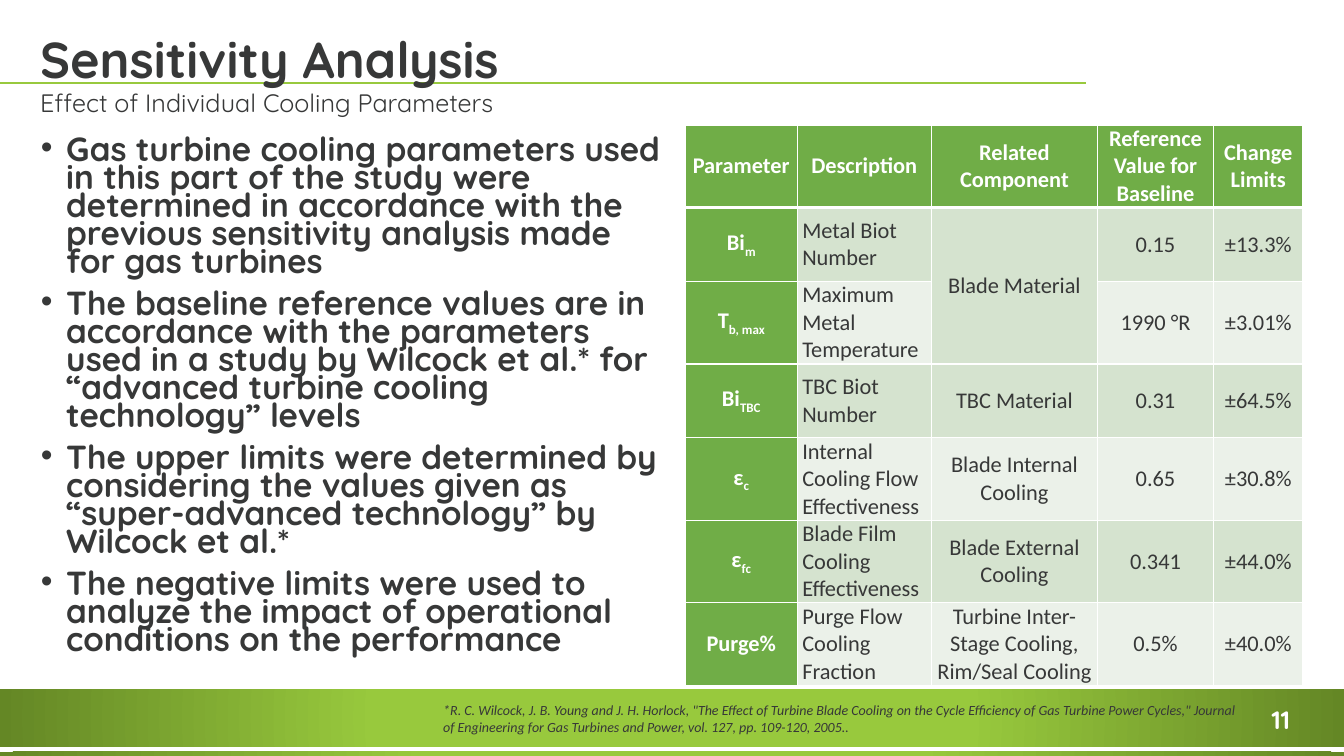
from dataclasses import dataclass
from typing import NamedTuple

from lxml import etree
from pptx import Presentation
from pptx.dml.color import RGBColor
from pptx.enum.shapes import MSO_CONNECTOR, MSO_SHAPE
from pptx.enum.text import MSO_ANCHOR, PP_ALIGN
from pptx.oxml.ns import qn
from pptx.util import Cm, Pt

STRAIGHT = MSO_CONNECTOR.STRAIGHT
RECTANGLE = MSO_SHAPE.RECTANGLE
LEFT, CENTER = PP_ALIGN.LEFT, PP_ALIGN.CENTER
TOP, MIDDLE, BOTTOM = MSO_ANCHOR.TOP, MSO_ANCHOR.MIDDLE, MSO_ANCHOR.BOTTOM


@dataclass(frozen=True)
class Theme:
    ink: str = "373838"
    white: str = "FFFFFF"
    lime: str = "98C93D"
    olive: str = "648725"
    head: str = "70AD47"
    bands: tuple[str, str] = ("D5E3CF", "EBF1E9")
    display: str = "Quicksand"
    text: str = "Calibri"
    title_size: float = 36
    subtitle_size: float = 18
    bullet_size: float = 23.8
    table_size: float = 16
    number_size: float = 18
    note_size: float = 10


THEME = Theme()


class Area(NamedTuple):
    """Left, top, width and height in centimetres."""
    left: float
    top: float
    width: float
    height: float

    def lengths(self) -> list[Cm]:
        return [Cm(value) for value in self]


class Style(NamedTuple):
    font: str
    size: float
    color: str = THEME.ink
    bold: bool = False
    italic: bool = False


class Band(NamedTuple):
    area: Area
    bright_until: float


class Parameter(NamedTuple):
    symbol: str
    subscript: str
    description: str
    component: str
    reference: str
    limits: str
    height: float


TWO_LINES, THREE_LINES = 1.86, 2.08
HEADINGS = ["Parameter", "Description", "Related Component",
            "Reference Value for Baseline", "Change Limits"]
COLUMN_WIDTHS = [2.82, 3.38, 4.19, 2.92, 2.26]
PARAMETERS = [
    Parameter("Bi", "m", "Metal Biot Number", "Blade Material", "0.15", "±13.3%", TWO_LINES),
    Parameter("T", "b, max", "Maximum Metal Temperature", "", "1990 °R", "±3.01%", THREE_LINES),
    Parameter("Bi", "TBC", "TBC Biot Number", "TBC Material", "0.31", "±64.5%", TWO_LINES),
    Parameter("ε", "c", "Internal Cooling Flow Effectiveness", "Blade Internal Cooling",
              "0.65", "±30.8%", THREE_LINES),
    Parameter("ε", "fc", "Blade Film Cooling Effectiveness", "Blade External Cooling",
              "0.341", "±44.0%", THREE_LINES),
    Parameter("Purge%", "", "Purge Flow Cooling Fraction",
              "Turbine Inter-Stage Cooling, Rim/Seal Cooling", "0.5%", "±40.0%", THREE_LINES),
]
BANDS = [Band(Area(0, 17.37, 33.87, 1.45), 0.44), Band(Area(0, 18.95, 33.87, 0.1), 0.37)]
BULLETS = [
    "Gas turbine cooling parameters used in this part of the study were determined in "
    "accordance with the previous sensitivity analysis made for gas turbines",
    "The baseline reference values are in accordance with the parameters used in a study "
    "by Wilcock et al.* for “advanced turbine cooling technology” levels",
    "The upper limits were determined by considering the values given as “super-advanced "
    "technology” by Wilcock et al.*",
    "The negative limits were used to analyze the impact of operational conditions on the "
    "performance",
]
CITATION = ('*R. C. Wilcock, J. B. Young and J. H. Horlock, "The Effect of Turbine Blade Cooling '
            'on the Cycle Efficiency of Gas Turbine Power Cycles," Journal of Engineering for '
            'Gas Turbines and Power, vol. 127, pp. 109-120, 2005..')


def rgb(color: str) -> RGBColor:
    return RGBColor.from_string(color)


def format_para(para, style: Style, align=LEFT, spacing: float = 1.0) -> None:
    para.alignment = align
    para.line_spacing = spacing
    for span in para.runs:
        font = span.font
        font.name, font.size = style.font, Pt(style.size)
        font.bold, font.italic = style.bold, style.italic
        font.color.rgb = rgb(style.color)


def add_text(page, area: Area, text: str, style: Style, spacing: float = 1.0, wrap: bool = True):
    box = page.shapes.add_textbox(*area.lengths())
    frame = box.text_frame
    frame.word_wrap = wrap
    frame.vertical_anchor = TOP
    frame.text = text
    for para in frame.paragraphs:
        format_para(para, style, spacing=spacing)
    return box


def add_band(page, band: Band):
    """Draw a bar that is lime in the middle and darkens outwards."""
    bar = page.shapes.add_shape(RECTANGLE, *band.area.lengths())
    bar.shadow.inherit = False
    bar.line.fill.background()
    bar.fill.gradient()
    stops = zip(bar.fill.gradient_stops, (band.bright_until, 1.0), (THEME.lime, THEME.olive))
    for stop, position, color in stops:
        stop.position = position
        stop.color.rgb = rgb(color)
    gradient = bar.element.spPr.find(qn("a:gradFill"))
    gradient.remove(gradient.find(qn("a:lin")))
    circle = etree.Element(qn("a:path"), path="circle")
    etree.SubElement(circle, qn("a:fillToRect"), dict.fromkeys("ltrb", "50000"))
    gradient.find(qn("a:gsLst")).addnext(circle)
    return bar


def add_title_rule(page):
    rule = page.shapes.add_connector(STRAIGHT, 0, Cm(2.09), Cm(27.38), Cm(2.09))
    rule.line.color.rgb = rgb(THEME.lime)
    rule.line.width = Pt(1.75)
    etree.SubElement(rule.element.spPr, qn("a:effectLst"))
    return rule


def add_title(page) -> None:
    title = page.shapes.title
    title.left, title.top, title.width, title.height = Area(0.76, 0.71, 32.18, 1.68).lengths()
    title.text_frame.text = "Sensitivity Analysis"
    title.text_frame.vertical_anchor = BOTTOM
    format_para(title.text_frame.paragraphs[0],
                Style(THEME.display, THEME.title_size, bold=True), spacing=0.9)


def add_bullets(page) -> None:
    box = add_text(page, Area(0.76, 3.38, 16.18, 14.1), "\n".join(BULLETS),
                   Style(THEME.display, THEME.bullet_size, bold=True), spacing=0.7)
    for index, para in enumerate(box.text_frame.paragraphs):
        properties = para._p.get_or_add_pPr()
        properties.set("marL", str(Cm(0.66)))
        properties.set("indent", str(Cm(-0.64)))
        etree.SubElement(properties, qn("a:buFont"), typeface="Arial")
        etree.SubElement(properties, qn("a:buChar"), char="•")
        if index:
            para.space_before = Pt(10)


def add_borders(cell, top: float, bottom: float) -> None:
    properties = cell._tc.get_or_add_tcPr()
    for side, width in (("L", 1), ("R", 1), ("T", top), ("B", bottom)):
        border = etree.SubElement(properties, qn(f"a:ln{side}"), w=str(Pt(width)))
        fill = etree.SubElement(border, qn("a:solidFill"))
        etree.SubElement(fill, qn("a:srgbClr"), val=THEME.white)


def fill_cell(cell, row: int, column: int, text: str, subscript: str = "") -> None:
    is_head = row == 0 or column == 0
    add_borders(cell, top=3 if row == 1 else 1, bottom=3 if row == 0 else 1)
    cell.fill.solid()
    cell.fill.fore_color.rgb = rgb(THEME.head if is_head else THEME.bands[(row - 1) % 2])
    cell.vertical_anchor = MIDDLE
    cell.margin_left = cell.margin_right = Cm(0.13)
    cell.margin_top = cell.margin_bottom = 0
    para = cell.text_frame.paragraphs[0]
    para.text = text
    if subscript:
        span = para.add_run()
        span.text = subscript
        span.font._element.set("baseline", "-25000")
    style = Style(THEME.text, THEME.table_size, THEME.white if is_head else THEME.ink, is_head)
    format_para(para, style, LEFT if column == 1 and row else CENTER)


def add_parameter_table(page) -> None:
    heights = [THREE_LINES] + [parameter.height for parameter in PARAMETERS]
    area = Area(17.27, 3.15, sum(COLUMN_WIDTHS), sum(heights))
    table = page.shapes.add_table(len(heights), len(COLUMN_WIDTHS), *area.lengths()).table
    for column, width in zip(table.columns, COLUMN_WIDTHS):
        column.width = Cm(width)
    for row, height in zip(table.rows, heights):
        row.height = Cm(height)
    for column, heading in enumerate(HEADINGS):
        fill_cell(table.cell(0, column), 0, column, heading)
    for row, parameter in enumerate(PARAMETERS, start=1):
        fill_cell(table.cell(row, 0), row, 0, parameter.symbol, parameter.subscript)
        for column, text in enumerate(parameter[2:6], start=1):
            fill_cell(table.cell(row, column), row, column, text)
    table.cell(1, 2).merge(table.cell(2, 2))


def main() -> None:
    deck = Presentation()
    deck.slide_width, deck.slide_height = Cm(33.87), Cm(19.05)
    page = deck.slides.add_slide(deck.slide_layouts[5])
    add_title(page)
    rule = add_title_rule(page)
    page.shapes.title.element.addprevious(rule.element)
    for band in BANDS:
        add_band(page, band)
    add_text(page, Area(31.8, 17.63, 1.22, 1.02), "11",
             Style(THEME.display, THEME.number_size, THEME.white, bold=True), wrap=False)
    add_text(page, Area(0.76, 2.16, 32.18, 1.04), "Effect of Individual Cooling Parameters",
             Style(THEME.display, THEME.subtitle_size), spacing=0.9)
    add_bullets(page)
    add_parameter_table(page)
    add_text(page, Area(10.92, 17.55, 20.47, 1.12), CITATION,
             Style(THEME.text, THEME.note_size, italic=True))
    deck.save("out.pptx")


if __name__ == "__main__":
    main()
